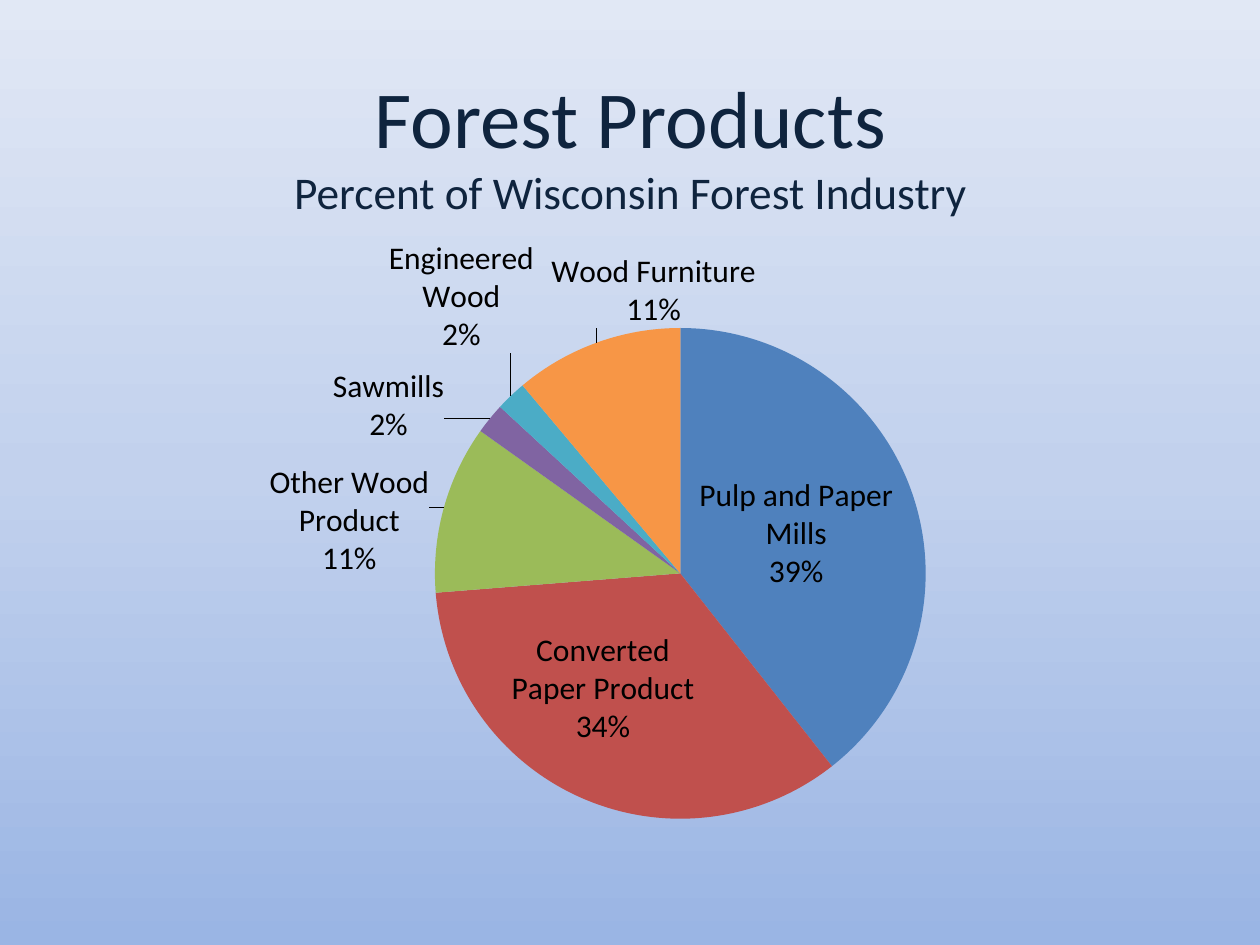
from copy import deepcopy
from pptx import Presentation
from pptx import util as u
from pptx.chart.data import CategoryChartData
from pptx.dml.color import RGBColor
from pptx.enum import chart as ch, text
from pptx.oxml import parse_xml
from pptx.oxml.ns import nsdecls, qn

PX = 914400 // 126
NAVY = RGBColor(0x0F, 0x24, 0x3E)
BLACK = RGBColor(0, 0, 0)
BACKGROUND = [
    (0, RGBColor(0x9A, 0xB5, 0xE4)),
    (0.5, RGBColor(0xC2, 0xD1, 0xED)),
    (1, RGBColor(0xE1, 0xE8, 0xF5)),
]
# category, percent, colour, label place, label shift in px
SLICES = [
    ("Pulp and Paper Mills", 39, RGBColor(0x4F, 0x81, 0xBD), "ctr", None),
    ("Converted Paper Product", 34, RGBColor(0xC0, 0x50, 0x4D), "ctr", (-28, 3)),
    ("Other Wood Product", 11, RGBColor(0x9B, 0xBB, 0x59), "outEnd", (-8, 71)),
    ("Sawmills", 2, RGBColor(0x80, 0x64, 0xA2), "outEnd", (-40, 30)),
    ("Engineered Wood", 2, RGBColor(0x4B, 0xAC, 0xC6), "outEnd", (28, -37)),
    ("Wood Furniture", 11, RGBColor(0xF7, 0x96, 0x46), "outEnd", (162, -7)),
]
CHART_X, CHART_Y, CHART_W, CHART_H = 115, 234, 1081, 711
PIE_X, PIE_Y, PIE_SIZE = 435, 328, 491


def manual_layout(x, y, extra="", mode=""):
    """Chart layout XML for px lengths, as shares of the chart frame."""
    return (f'<c:layout {nsdecls("c")}><c:manualLayout>{mode}'
            f'<c:x val="{x / CHART_W:.3f}"/><c:y val="{y / CHART_H:.3f}"/>'
            f'{extra}</c:manualLayout></c:layout>')


prs = Presentation()
prs.slide_width, prs.slide_height = u.Inches(10), u.Inches(7.5)
s = prs.slides.add_slide(prs.slide_layouts[5])

# Background
fill = s.background.fill
fill.gradient()
fill.gradient_angle = 90
first_stop = next(s.element.iter(qn("a:gs")))
first_stop.addnext(deepcopy(first_stop))
for stop, (position, color) in zip(fill.gradient_stops, BACKGROUND):
    stop.position = position
    stop.color.rgb = color

# Title
title = s.shapes.title
title.left, title.top, title.width, title.height = (
    n * PX for n in (95, 63, 1071, 203))
tf = title.text_frame
tf.word_wrap = True
tf.auto_size = text.MSO_AUTO_SIZE.NONE
tf.vertical_anchor = text.MSO_ANCHOR.MIDDLE
tf.margin_bottom = 49 * PX
for i, (line, size) in enumerate([
        ("Forest Products", 46.2),
        ("Percent of Wisconsin Forest Industry", 25.9)]):
    p = tf.add_paragraph() if i else tf.paragraphs[0]
    p.alignment = text.PP_ALIGN.CENTER
    r = p.add_run()
    r.text = line
    r.font.name, r.font.size = "Calibri", u.Pt(size)
    r.font.color.rgb = NAVY

# Pie chart
data = CategoryChartData()
data.categories = [row[0] for row in SLICES]
data.add_series("Series 1", [row[1] for row in SLICES])
chart = s.shapes.add_chart(
    ch.XL_CHART_TYPE.PIE, CHART_X * PX, CHART_Y * PX,
    CHART_W * PX, CHART_H * PX, data).chart
chart.has_title = False
chart.has_legend = False
chart.font.name, chart.font.size = "Calibri", u.Pt(18)
chart.font.color.rgb = BLACK
plot = chart.plots[0]
plot.vary_by_categories = True
series = plot.series[0]
for i, row in enumerate(SLICES):
    point_fill = series.points[i].format.fill
    point_fill.solid()
    point_fill.fore_color.rgb = row[2]

plot_area = next(chart.element.iter(qn("c:plotArea")))
for old in plot_area.findall(qn("c:layout")):
    plot_area.remove(old)
plot_area.insert(0, parse_xml(manual_layout(
    PIE_X - CHART_X, PIE_Y - CHART_Y,
    extra=f'<c:w val="{PIE_SIZE / CHART_W:.3f}"/><c:h val="{PIE_SIZE / CHART_H:.3f}"/>',
    mode='<c:layoutTarget val="inner"/><c:xMode val="edge"/><c:yMode val="edge"/>')))

# Category and percent labels, with leader lines
shows = "".join(
    f'<c:show{name} val="{value}"/>' for name, value in [
        ("LegendKey", 0), ("Val", 0), ("CatName", 1),
        ("SerName", 0), ("Percent", 1), ("BubbleSize", 0)])
shows += "<c:separator>\n</c:separator>"
number_format = '<c:numFmt formatCode="0%" sourceLinked="0"/>'
labels = "".join(
    f'<c:dLbl><c:idx val="{i}"/>{manual_layout(*shift) if shift else ""}'
    f'{number_format}<c:dLblPos val="{place}"/>{shows}</c:dLbl>'
    for i, (_, _, _, place, shift) in enumerate(SLICES))
series_xml = next(chart.element.iter(qn("c:ser")))
series_xml.find(qn("c:cat")).addprevious(parse_xml(
    f'<c:dLbls {nsdecls("c")}>{labels}{number_format}{shows}'
    '<c:showLeaderLines val="1"/></c:dLbls>'))

prs.save("out.pptx")
